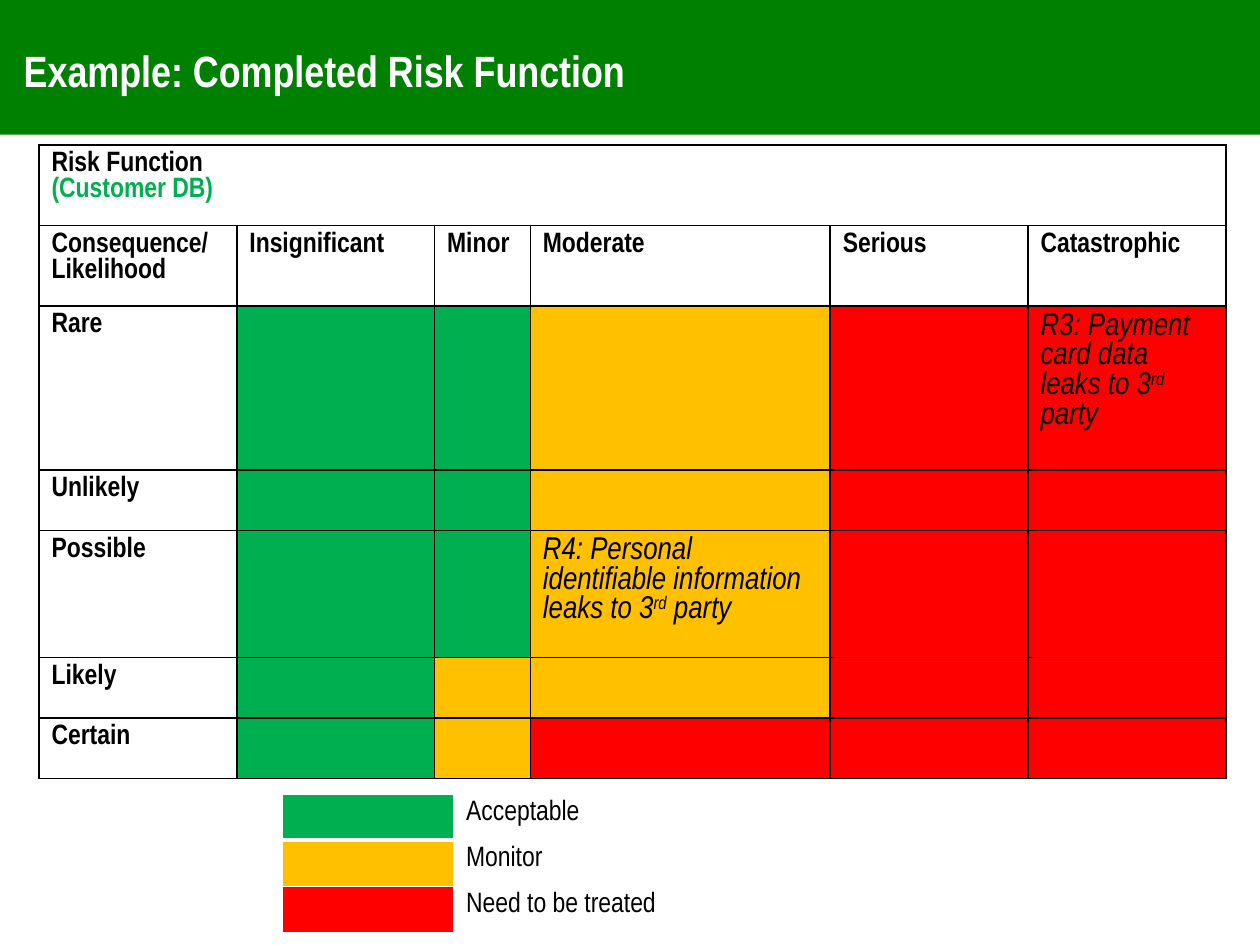
from dataclasses import dataclass

from lxml import etree
from pptx import Presentation
from pptx import util as u
from pptx.dml.color import RGBColor
from pptx.enum import shapes, text
from pptx.oxml import ns


@dataclass(frozen=True)
class Theme:
    font: str = "Arial Narrow"
    banner: str = "008000"
    green: str = "00B050"
    amber: str = "FFC000"
    red: str = "FF0000"
    white: str = "FFFFFF"
    black: str = "000000"
    title_size: int = 25
    label_size: int = 16
    risk_size: int = 18


T = Theme()
LEVELS = {"G": T.green, "A": T.amber, "R": T.red}

HEADINGS = ["Consequence/\nLikelihood", "Insignificant", "Minor",
            "Moderate", "Serious", "Catastrophic"]
LIKELIHOODS = [("Rare", "GGARR"), ("Unlikely", "GGARR"), ("Possible", "GGARR"),
               ("Likely", "GAARR"), ("Certain", "GARRR")]
# (row, column) of each risk and its wording before the superscript
RISKS = {(2, 5): "R3: Payment card data leaks to 3",
         (4, 3): "R4: Personal identifiable information leaks to 3"}
LEGEND = [("G", "Acceptable"), ("A", "Monitor"), ("R", "Need to be treated")]


def rgb(color):
    return RGBColor.from_string(color)


def style(p, size, color=T.black, bold=False, italic=False):
    f = p.font
    f.name, f.size, f.bold, f.italic = T.font, u.Pt(size), bold, italic
    f.color.rgb = rgb(color)


def write(tf, wording, size=T.label_size, **look):
    for i, line in enumerate(wording.split("\n")):
        p = tf.add_paragraph() if i else tf.paragraphs[0]
        p.add_run().text = line
        style(p, size, **look)


def write_risk(tf, wording):
    p = tf.paragraphs[0]
    for part in (wording, "rd", " party"):
        r = p.add_run()
        r.text = part
        if part == "rd":
            r.font._element.set("baseline", "30000")
    style(p, T.risk_size, italic=True)


def fill(obj, color):
    obj.fill.solid()
    obj.fill.fore_color.rgb = rgb(color)


def border(cell, color, top=1, bottom=1):
    tc_pr = cell._tc.get_or_add_tcPr()
    for side, width in (("L", 1), ("R", 1), ("T", top), ("B", bottom)):
        ln = etree.SubElement(tc_pr, ns.qn(f"a:ln{side}"), w=str(u.Pt(width)))
        solid = etree.SubElement(ln, ns.qn("a:solidFill"))
        etree.SubElement(solid, ns.qn("a:srgbClr"), val=color)


def add_grid(s, left, top, widths, heights):
    frame = s.shapes.add_table(len(heights), len(widths), u.Inches(left), u.Inches(top),
                               u.Inches(sum(widths)), u.Inches(sum(heights)))
    table = frame.table
    table.first_row = table.horz_banding = False
    for col, width in zip(table.columns, widths):
        col.width = u.Inches(width)
    for row, height in zip(table.rows, heights):
        row.height = u.Inches(height)
    return table


def add_banner(s):
    sp = s.shapes.add_shape(shapes.MSO_SHAPE.RECTANGLE, 0, u.Inches(-0.03),
                            u.Inches(10), u.Inches(1.1))
    sp.shadow.inherit = False
    fill(sp, T.banner)
    sp.line.fill.background()

    box = s.shapes.add_textbox(u.Inches(0.09), u.Inches(0.21), u.Inches(9), u.Inches(0.69))
    tf = box.text_frame
    tf.word_wrap = True
    tf.vertical_anchor = text.MSO_ANCHOR.MIDDLE
    write(tf, "Example: Completed Risk Function", T.title_size, color=T.white, bold=True)


def add_risk_matrix(s):
    table = add_grid(s, 0.31, 1.15, [1.57, 1.57, 0.76, 2.38, 1.57, 1.57],
                     [0.64, 0.64, 1.04, 0.48, 1.01, 0.48, 0.48])
    for cell in table.iter_cells():
        border(cell, T.black)
        fill(cell, T.white)

    # Heading across all columns
    head = table.cell(0, 0)
    head.merge(table.cell(0, 5))
    write(head.text_frame, "Risk Function\n(Customer DB)", bold=True)
    head.text_frame.paragraphs[1].font.color.rgb = rgb(T.green)

    # Column headings
    for col, heading in enumerate(HEADINGS):
        write(table.cell(1, col).text_frame, heading, bold=True)

    # Likelihood rows with their levels
    for row, (likelihood, levels) in enumerate(LIKELIHOODS, start=2):
        write(table.cell(row, 0).text_frame, likelihood, bold=True)
        for col, level in enumerate(levels, start=1):
            fill(table.cell(row, col), LEVELS[level])

    for (row, col), wording in RISKS.items():
        write_risk(table.cell(row, col).text_frame, wording)


def add_legend(s):
    table = add_grid(s, 2.24, 6.3, [1.36, 3.83], [0.34] * len(LEGEND))
    for row, (level, meaning) in enumerate(LEGEND):
        swatch, label = table.cell(row, 0), table.cell(row, 1)
        for cell, color in ((swatch, LEVELS[level]), (label, T.white)):
            border(cell, T.white, top=3 if row == 1 else 1, bottom=3 if row == 0 else 1)
            fill(cell, color)
        # Keep the empty swatch from stretching its row
        swatch.margin_top = swatch.margin_bottom = 0
        style(swatch.text_frame.paragraphs[0], T.label_size)
        write(label.text_frame, meaning)


def main():
    prs = Presentation()
    prs.slide_width, prs.slide_height = u.Inches(10), u.Inches(7.5)
    s = prs.slides.add_slide(prs.slide_layouts[6])
    add_banner(s)
    add_risk_matrix(s)
    add_legend(s)
    prs.save("out.pptx")


if __name__ == "__main__":
    main()
